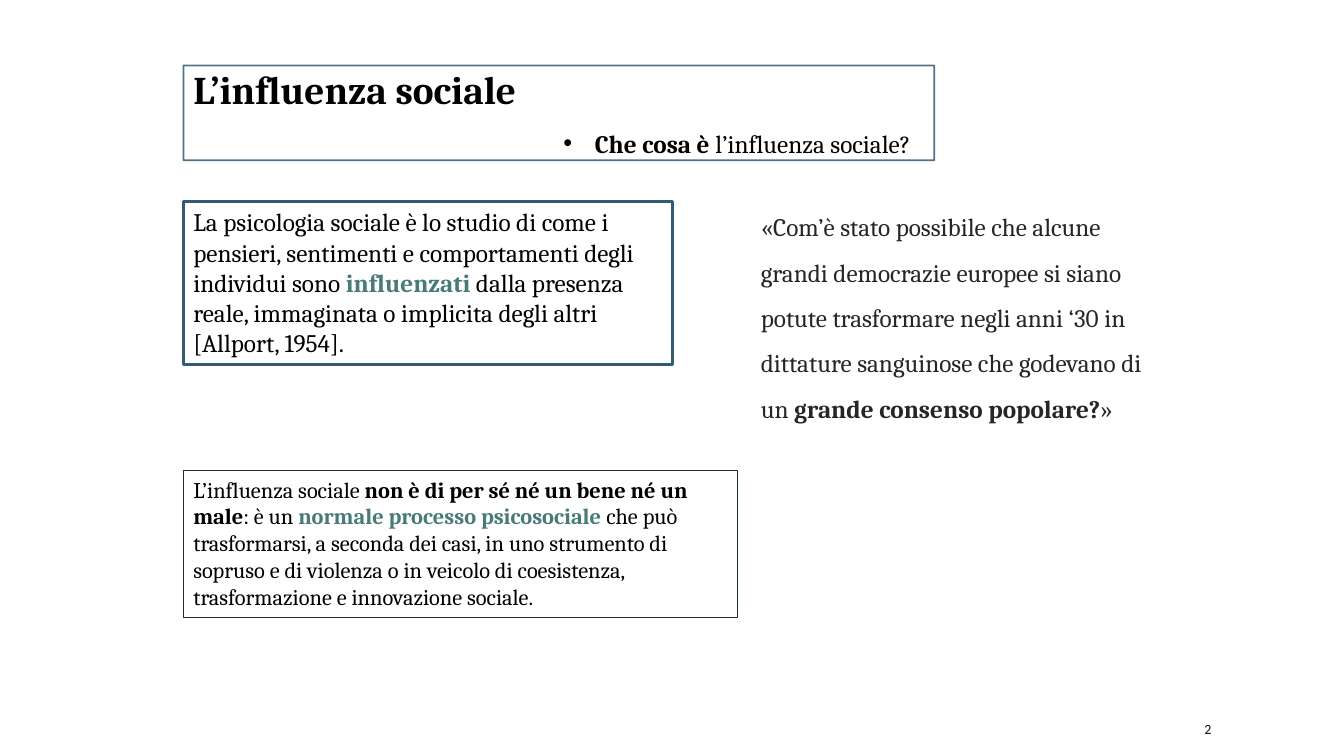
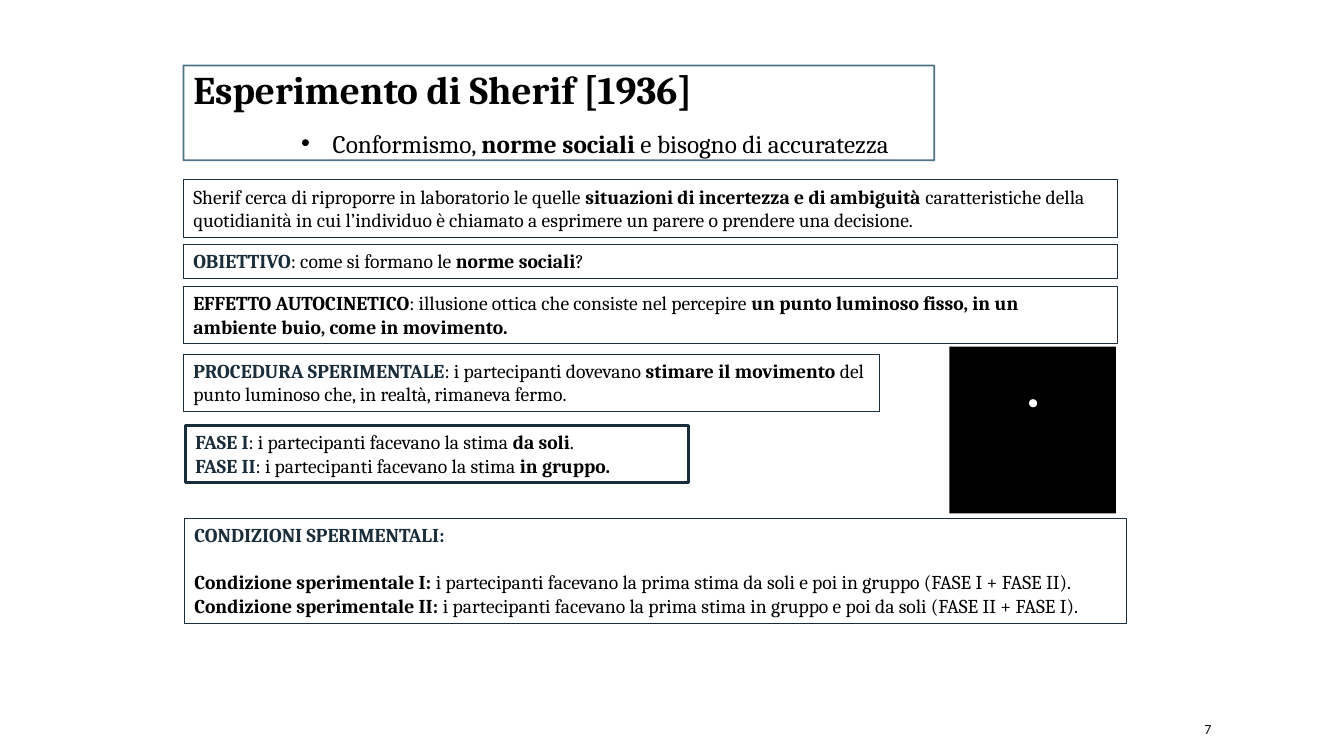
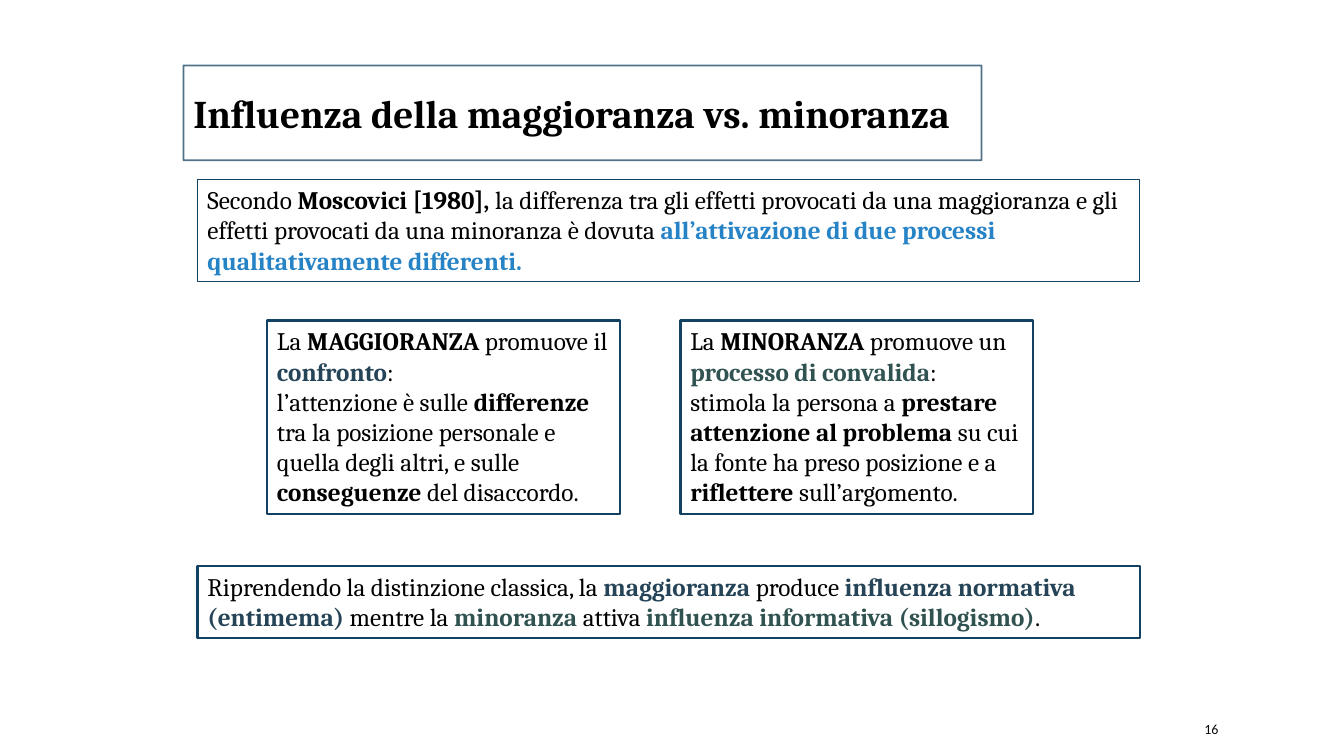
"""Builds three slides on social influence."""
from lxml import etree
from pptx import Presentation
from pptx import util as u
from pptx.dml import color
from pptx.enum import shapes, text
from pptx.oxml import ns

HUES = {
    "ink": "000000", "page": "0D0D0D", "quote": "262626", "white": "FFFFFF",
    "frame": "335B74", "navy": "1A2D3A", "blue": "134163", "sky": "2683C6",
    "teal": "487B78", "steel": "264457", "moss": "305250",
}
LEFT = 131
TOP = 128.2


def tone(name):
    return color.RGBColor.from_string(HUES[name])


def apply(item, values):
    for key, value in values.items():
        setattr(item, key, value)


def bold(words, hue="ink"):
    return words, hue


def write(shape, paras, size=18, hue="ink", face="Cambria", frame=None, para=None):
    body = shape.text_frame
    base = {"word_wrap": True, "vertical_anchor": text.MSO_ANCHOR.TOP}
    apply(body, base | (frame or {}))
    for num, parts in enumerate(paras):
        line = body.add_paragraph() if num else body.paragraphs[0]
        apply(line, {"alignment": text.PP_ALIGN.LEFT} | (para or {}))
        for part in parts:
            strong = isinstance(part, tuple)
            words, shade = part if strong else (part, hue)
            run = line.add_run()
            run.text = words
            apply(run.font, {"name": face, "size": u.Pt(size), "bold": strong})
            run.font.color.rgb = tone(shade)
    return body


def place(slide, area, kind="RECTANGLE", fill=None, edge=None, width=0.25):
    shape = slide.shapes.add_shape(shapes.MSO_SHAPE[kind], *map(u.Pt, area))
    shape.shadow.inherit = False
    if fill:
        shape.fill.solid()
        shape.fill.fore_color.rgb = tone(fill)
    else:
        shape.fill.background()
    if edge:
        shape.line.color.rgb = tone(edge)
        shape.line.width = u.Pt(width)
    else:
        shape.line.fill.background()
    return shape


def panel(slide, area, paras, size=18, edge="navy", width=0.25, fill=None):
    return write(place(slide, area, fill=fill, edge=edge, width=width), paras, size)


def label(slide, area, paras, **look):
    return write(slide.shapes.add_textbox(*map(u.Pt, area)), paras, **look)


def bullet(line):
    props = line._p.get_or_add_pPr()
    props.set("marL", str(u.Pt(22.5)))
    props.set("indent", str(u.Pt(-22.5)))
    etree.SubElement(props, ns.qn("a:buFont")).set("typeface", "Arial")
    etree.SubElement(props, ns.qn("a:buChar")).set("char", "•")


def start(deck, title, page, width=536.4, sub=None, spot=None):
    slide = deck.slides.add_slide(deck.slide_layouts[6])
    label(slide, (853.2, 509.8, 76.3, 21.6), [[page]], size=10, hue="page",
          face="Calibri", frame={"vertical_anchor": text.MSO_ANCHOR.MIDDLE})
    head = place(slide, (LEFT, 46.8, width, 67.7), edge="frame", width=1.25)
    for node in head.line._ln.iter(ns.qn("a:srgbClr")):
        etree.SubElement(node, ns.qn("a:alpha")).set("val", "86000")
    look = {"margin_top": 0} if sub else {"vertical_anchor": text.MSO_ANCHOR.MIDDLE}
    write(head, [[bold(title)]], 28, frame=look)
    if sub:
        left, span = spot
        body = label(slide, (left, 77, span, 40.3), [sub], para={"line_spacing": 1.5})
        bullet(body.paragraphs[0])
    return slide


def intro(deck):
    slide = start(deck, "L’influenza sociale", "2", spot=(395.3, 272.2),
                  sub=[bold("Che cosa è "), "l’influenza sociale?"])
    panel(slide, (LEFT, 144, 349.2, 116.6), [[
        "La psicologia sociale è lo studio di come i pensieri, sentimenti e "
        "comportamenti degli individui sono ", bold("influenzati", "teal"),
        " dalla presenza reale, immaginata o implicita degli altri [Allport, 1954].",
    ]], edge="frame", width=2, fill="white")
    label(slide, (536.4, 136.8, 292.3, 170.6), [[
        "«Com’è stato possibile che alcune grandi democrazie europee si siano "
        "potute trasformare negli anni ‘30 in dittature sanguinose che godevano "
        "di un ", bold("grande consenso popolare?", "quote"), "»",
    ]], hue="quote", para={"line_spacing": 1.5})
    panel(slide, (LEFT, 336.2, 395.3, 104.4), [[
        "L’influenza sociale ", bold("non è di per sé né un bene né un male"),
        ": è un ", bold("normale processo psicosociale ", "teal"),
        "che può trasformarsi, a seconda dei casi, in uno strumento di sopruso "
        "e di violenza o in veicolo di coesistenza, trasformazione e "
        "innovazione sociale.",
    ]], 16, fill="white")


def sherif(deck):
    slide = start(deck, "Esperimento di Sherif [1936]", "7", spot=(208.1, 455.8),
                  sub=["Conformismo, ", bold("norme sociali "),
                       "e bisogno di accuratezza"])
    top = TOP
    for high, parts in (
        (41, ["Sherif cerca di riproporre in laboratorio le quelle ",
              bold("situazioni di incertezza e di ambiguità "),
              "caratteristiche della quotidianità in cui l’individuo è chiamato "
              "a esprimere un parere o prendere una decisione."]),
        (24.5, [bold("OBIETTIVO", "navy"), ": come si formano le ",
                bold("norme sociali"), "?"]),
        (41, [bold("EFFETTO AUTOCINETICO"),
              ": illusione ottica che consiste nel percepire ",
              bold("un punto luminoso fisso, in un ambiente buio, "
                   "come in movimento.")]),
    ):
        panel(slide, (LEFT, top, 666.7, high), [parts], 14)
        top += high + 5.4
    place(slide, (678.2, 247.7, 119, 119), fill="ink")
    place(slide, (735, 285.1, 5.8, 5.8), "OVAL", fill="white")
    panel(slide, (LEFT, 252.7, 496.8, 41), [[
        bold("PROCEDURA SPERIMENTALE", "navy"), ": i partecipanti dovevano ",
        bold("stimare il movimento "),
        "del punto luminoso che, in realtà, rimaneva fermo.",
    ]], 14)
    panel(slide, (132.5, 303.8, 359.3, 41), [
        [bold(phase, "navy"), ": i partecipanti facevano la stima ", bold(how), *end]
        for phase, how, end in (("FASE I", "da soli", ["."]),
                                ("FASE II", "in gruppo.", []))
    ], 14, width=2)
    body = panel(slide, (131.8, 370, 672.5, 75), [
        [bold("CONDIZIONI SPERIMENTALI:", "navy")],
        [bold("Condizione sperimentale I: "),
         "i partecipanti facevano la prima stima da soli e poi in gruppo "
         "(FASE I + FASE II)."],
        [bold("Condizione sperimentale II:"),
         " i partecipanti facevano la prima stima in gruppo e poi da soli "
         "(FASE II + FASE I)."],
    ], 14)
    body.paragraphs[0].space_after = u.Pt(16.8)


def versus(deck):
    slide = start(deck, "Influenza della maggioranza vs. minoranza", "16", 570.2)
    panel(slide, (141.1, TOP, 673.2, 72.7), [[
        "Secondo ", bold("Moscovici [1980], "),
        "la differenza tra gli effetti provocati da una maggioranza e gli "
        "effetti provocati da una minoranza è dovuta ",
        bold("all’attivazione di due processi qualitativamente differenti.", "sky"),
    ]], edge="blue", width=0.75)
    sides = (
        [["La ", bold("MAGGIORANZA"), " promuove il ", bold("confronto", "steel"), ":"],
         ["l’attenzione è sulle ", bold("differenze"),
          " tra la posizione personale e quella degli altri, e sulle ",
          bold("conseguenze"), " del disaccordo."]],
        [["La ", bold("MINORANZA"), " promuove un ",
          bold("processo di convalida", "moss"), ":"],
         ["stimola la persona a ", bold("prestare attenzione al problema "),
          "su cui la fonte ha preso posizione e a ",
          bold("riflettere"), " sull’argomento."]],
    )
    for num, paras in enumerate(sides):
        panel(slide, (190.8 + num * 295.2, 229, 252, 138.2), paras,
              edge="blue", width=1.75)
    panel(slide, (141.1, 404.6, 673.2, 51), [[
        "Riprendendo la distinzione classica, la ", bold("maggioranza", "steel"),
        " produce ", bold("influenza normativa (entimema) ", "steel"),
        "mentre la ", bold("minoranza", "moss"), " attiva ",
        bold("influenza informativa (sillogismo)", "moss"), ".",
    ]], edge="blue", width=1.5)


def main():
    deck = Presentation()
    apply(deck, {"slide_width": u.Pt(960), "slide_height": u.Pt(540)})
    for build in (intro, sherif, versus):
        build(deck)
    deck.save("out.pptx")


if __name__ == "__main__":
    main()
